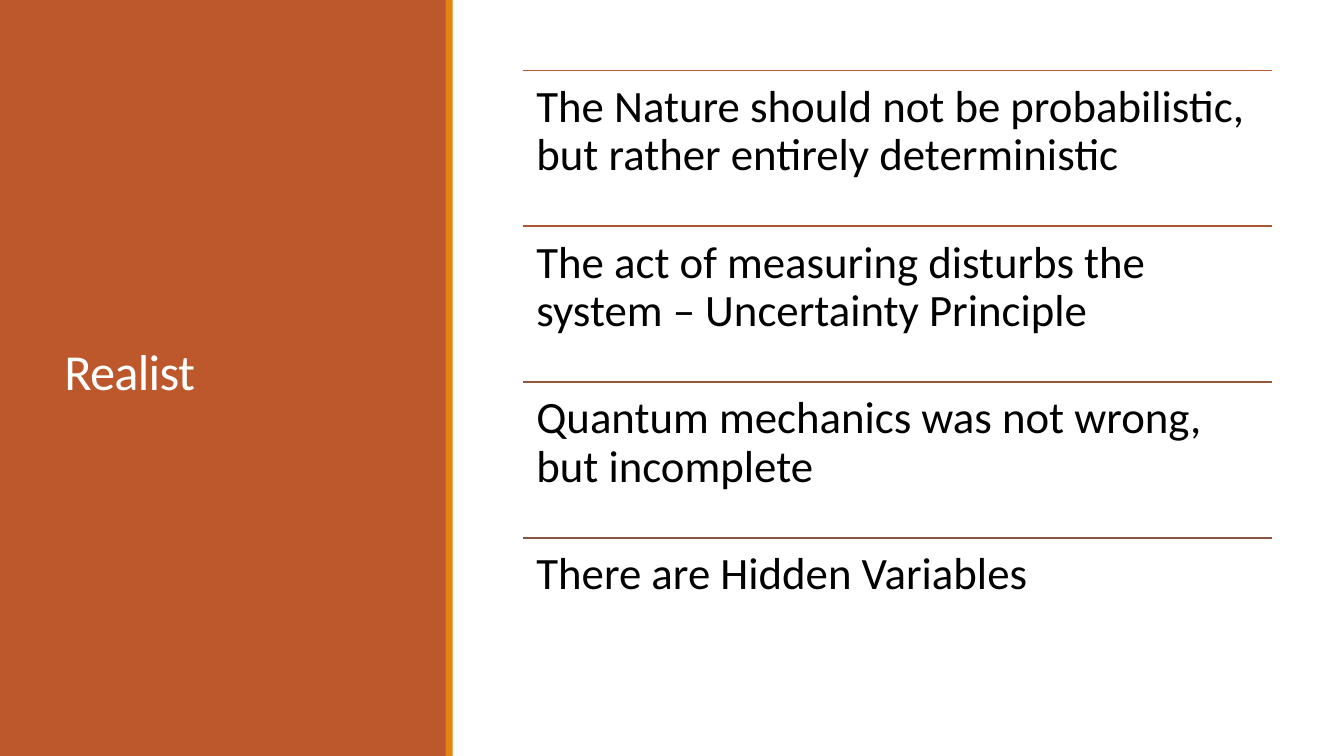
import pptx
import pptx.util
import pptx.dml.color
import pptx.enum.shapes
import pptx.enum.text
from pptx.oxml.ns import qn
from lxml import etree

TITLE = "Realist"
STATEMENTS = [
    ("The Nature should not be probabilistic, but rather entirely deterministic", "rule 1"),
    ("The act of measuring disturbs the system – Uncertainty Principle", "rule 2"),
    ("Quantum mechanics was not wrong, but incomplete", "rule 3"),
    ("There are Hidden Variables", "rule 4"),
]
COLOURS = {
    "panel": "BD582C", "stripe": "E48312", "title": "FFFFFF", "body": "000000",
    "rule 1": "BD582C", "rule 2": "AA5834", "rule 3": "97573A", "rule 4": "865640",
}
FONT = "Calibri"
SLIDE_WIDTH, SLIDE_HEIGHT = 13.33, 7.5
PANEL_WIDTH, STRIPE_LEFT, STRIPE_WIDTH = 4.43, 4.42, 0.07
TITLE_BOX = (0.54, 0.57, 3.37, 6.31)
LIST_LEFT, LIST_TOP, LIST_WIDTH, LIST_HEIGHT = 5.19, 0.7, 7.43, 6.18
ROW_HEIGHT = LIST_HEIGHT / len(STATEMENTS)

Inches = pptx.util.Inches


def colour(name):
    return pptx.dml.color.RGBColor.from_string(COLOURS[name])


def add_block(slide, left, width, fill):
    """Add a plain rectangle as tall as the slide."""
    shape = slide.shapes.add_shape(
        pptx.enum.shapes.MSO_SHAPE.RECTANGLE,
        Inches(left), 0, Inches(width), Inches(SLIDE_HEIGHT))
    shape.shadow.inherit = False
    shape.fill.solid()
    shape.fill.fore_color.rgb = colour(fill)
    shape.line.fill.background()


def add_text(slide, box, text, size, ink, spacing, inset, anchor):
    text_box = slide.shapes.add_textbox(*map(Inches, box))
    frame = text_box.text_frame
    frame.word_wrap = True
    frame.vertical_anchor = anchor
    frame.margin_left = frame.margin_right = Inches(inset[0])
    frame.margin_top = frame.margin_bottom = Inches(inset[1])
    frame.text = text
    paragraph = frame.paragraphs[0]
    paragraph.line_spacing = spacing
    run = paragraph.runs[0]
    run.font.name = FONT
    run.font.size = pptx.util.Pt(size)
    run.font.color.rgb = colour(ink)
    return run


def add_rule(slide, top, ink):
    connector = slide.shapes.add_connector(
        pptx.enum.shapes.MSO_CONNECTOR.STRAIGHT, Inches(LIST_LEFT), Inches(top),
        Inches(LIST_LEFT + LIST_WIDTH), Inches(top))
    connector.line.color.rgb = colour(ink)
    connector.line.width = pptx.util.Pt(1.25)
    etree.SubElement(connector._element.spPr, qn("a:effectLst"))


def main():
    presentation = pptx.Presentation()
    presentation.slide_width = Inches(SLIDE_WIDTH)
    presentation.slide_height = Inches(SLIDE_HEIGHT)
    slide = presentation.slides.add_slide(presentation.slide_layouts[6])
    anchors = pptx.enum.text.MSO_ANCHOR

    add_block(slide, 0, PANEL_WIDTH, "panel")
    title_run = add_text(slide, TITLE_BOX, TITLE, 36, "title", 0.85, (0.1, 0.05), anchors.MIDDLE)
    title_run.font._element.set("spc", "-50")
    add_block(slide, STRIPE_LEFT, STRIPE_WIDTH, "stripe")

    for row, (statement, rule) in enumerate(STATEMENTS):
        top = LIST_TOP + row * ROW_HEIGHT
        add_rule(slide, top, rule)
        add_text(slide, (LIST_LEFT, top, LIST_WIDTH, ROW_HEIGHT), statement,
                 32, "body", 0.9, (0.13, 0.13), anchors.TOP)

    presentation.save("out.pptx")


if __name__ == "__main__":
    main()
